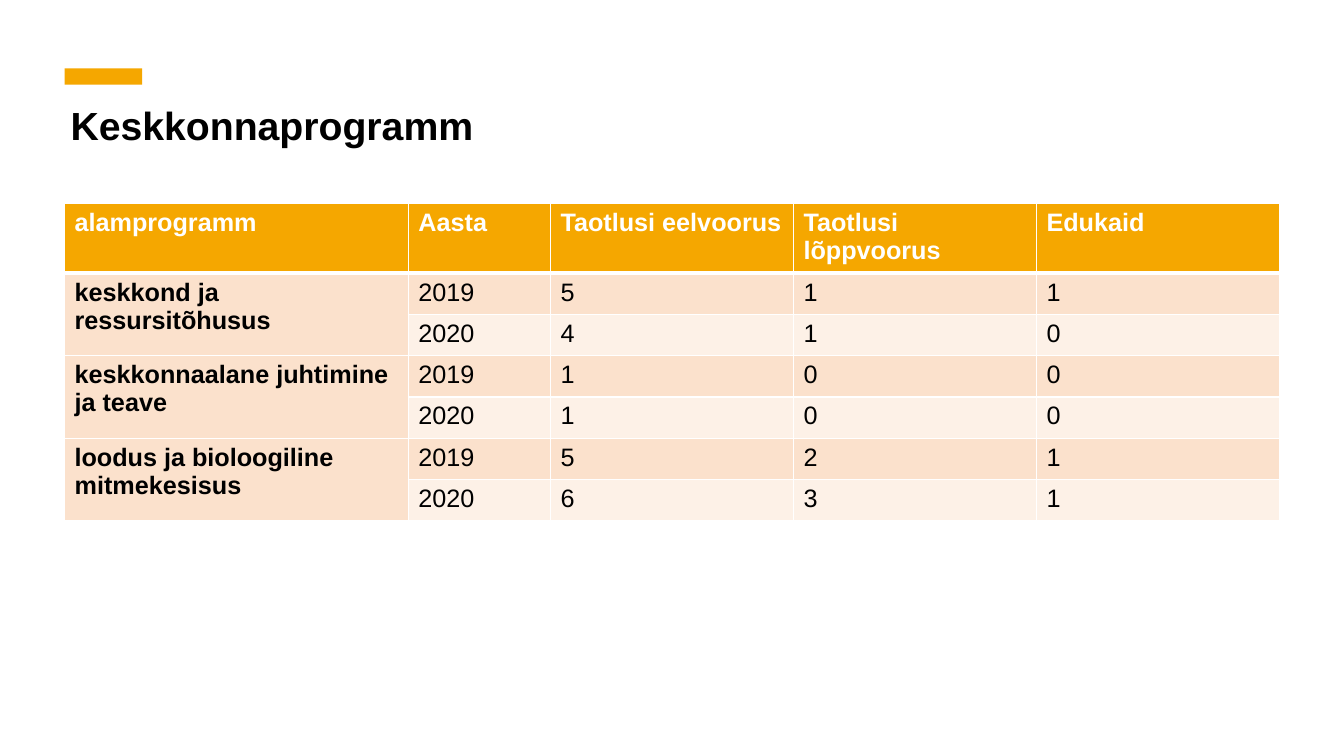
import pptx
import pptx.util
import pptx.dml.color
import pptx.enum.shapes
import pptx.enum.text
import pptx.oxml
import pptx.oxml.ns

Inches = pptx.util.Inches
Pt = pptx.util.Pt

ORANGE, PEACH, CREAM = "F5A700", "FBE1CC", "FDF1E7"
BLACK, WHITE = "000000", "FFFFFF"
HEADS = ["alamprogramm", "Aasta", "Taotlusi eelvoorus", "Taotlusi lõppvoorus", "Edukaid"]
GROUPS = [
    ("keskkond ja ressursitõhusus", 10, [(2019, 5, 1, 1), (2020, 4, 1, 0)]),
    ("keskkonnaalane juhtimine ja teave", 10, [(2019, 1, 0, 0), (2020, 1, 0, 0)]),
    ("loodus ja bioloogiline mitmekesisus", 0, [(2019, 5, 2, 1), (2020, 6, 3, 1)]),
]
WIDTHS = [3.41, 1.41, 2.41, 2.41, 2.41]
HEAD_H, ROW_H = 0.69, 0.41


def paint(target, color):
    """Give a fill one solid colour."""
    target.fill.solid()
    target.fill.fore_color.rgb = pptx.dml.color.RGBColor.from_string(color)


def write(frame, text, size, color, bold, after=0):
    """Put one formatted run into the first paragraph."""
    para = frame.paragraphs[0]
    para.alignment = pptx.enum.text.PP_ALIGN.LEFT
    para.space_before = Pt(0)
    para.space_after = Pt(after)
    run = para.add_run()
    run.text = text
    run.font.name = "Arial"
    run.font.size = Pt(size)
    run.font.bold = bold
    run.font.color.rgb = pptx.dml.color.RGBColor.from_string(color)


def edge(cell, top, bottom):
    """Draw white borders around a cell, with top and bottom widths in points."""
    props = cell._tc.get_or_add_tcPr()
    sides = [("lnL", 1), ("lnR", 1), ("lnT", top), ("lnB", bottom)]
    for spot, (tag, width) in enumerate(sides):
        line = pptx.oxml.parse_xml(
            f'<a:{tag} {pptx.oxml.ns.nsdecls("a")} w="{Pt(width)}"><a:solidFill>'
            f'<a:srgbClr val="{WHITE}"/></a:solidFill></a:{tag}>')
        props.insert(spot, line)


def add_title(slide, left, top, width, height):
    """Place the accent bar and the title below it."""
    bar = slide.shapes.add_shape(
        pptx.enum.shapes.MSO_SHAPE.RECTANGLE,
        Inches(left + 0.04), Inches(top), Inches(0.77), Inches(0.16))
    bar.shadow.inherit = False
    bar.line.fill.background()
    paint(bar, ORANGE)
    title = slide.shapes.title
    title.left, title.top = Inches(left), Inches(top + 0.27)
    title.width, title.height = Inches(width), Inches(height - 0.27)
    frame = title.text_frame
    frame.word_wrap = True
    frame.auto_size = pptx.enum.text.MSO_AUTO_SIZE.NONE
    frame.vertical_anchor = pptx.enum.text.MSO_ANCHOR.TOP
    write(frame, "Keskkonnaprogramm", 28, BLACK, True, 10)


def add_grid(slide, left, top):
    """Place the table of applications by programme and year."""
    count = 1 + sum(len(years) for _, _, years in GROUPS)
    height = HEAD_H + ROW_H * (count - 1)
    table = slide.shapes.add_table(
        count, len(WIDTHS), Inches(left), Inches(top),
        Inches(sum(WIDTHS)), Inches(height)).table
    for column, width in zip(table.columns, WIDTHS):
        column.width = Inches(width)
    for index, row in enumerate(table.rows):
        row.height = Inches(ROW_H if index else HEAD_H)
        shade = (PEACH if index % 2 else CREAM) if index else ORANGE
        for cell in row.cells:
            paint(cell, shade)
            edge(cell, 3 if index == 1 else 1, 1 if index else 3)
    for cell, head in zip(table.rows[0].cells, HEADS):
        write(cell.text_frame, head, 18, WHITE, True)
    start = 1
    for name, after, years in GROUPS:
        first = table.cell(start, 0)
        first.merge(table.cell(start + len(years) - 1, 0))
        write(first.text_frame, name, 18, BLACK, True, after)
        for index, values in enumerate(years, start):
            for col, value in enumerate(values, 1):
                write(table.cell(index, col).text_frame, str(value), 18, BLACK, False)
        start += len(years)


def main():
    """Build and save the slide."""
    deck = pptx.Presentation()
    deck.slide_width, deck.slide_height = Inches(13.33), Inches(7.5)
    slide = deck.slides.add_slide(deck.slide_layouts.get_by_name("Title Only"))
    add_title(slide, 0.6, 0.68, 5.06, 0.84)
    add_grid(slide, 0.64, 2.02)
    deck.save("out.pptx")


if __name__ == "__main__":
    main()
